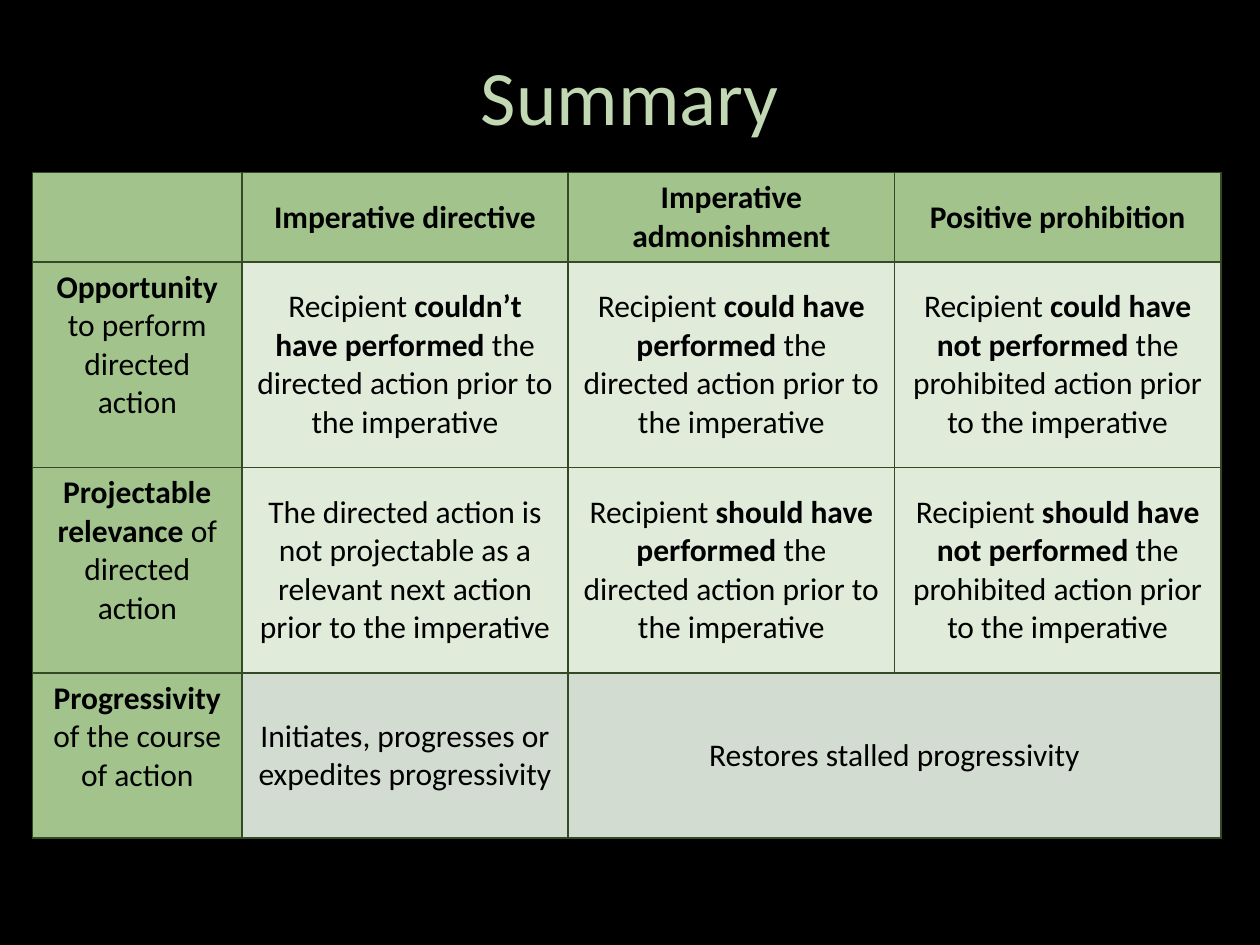
from lxml import etree
from pptx import Presentation
from pptx.dml.color import RGBColor
from pptx.enum.text import MSO_ANCHOR, PP_ALIGN
from pptx.oxml.ns import qn
from pptx.util import Inches, Pt

MIDDLE, TOP = MSO_ANCHOR.MIDDLE, MSO_ANCHOR.TOP
CENTER = PP_ALIGN.CENTER
FONT = "Calibri"
HEAD, BODY, LAST = "A2C48C", "E0EBD9", "D3DCD0"
EDGE = "344926"
WIDTHS = [1.66, 2.59, 2.59, 2.59]
HEIGHTS = [0.71, 1.63, 1.63, 1.31]
DIRECTED = " the directed action prior to the imperative"
BANNED = " the prohibited action prior to the imperative"

# Each cell lists plain and bold parts in turn, starting with plain.
ROWS = [
    [[], ["", "Imperative directive"], ["", "Imperative admonishment"],
     ["", "Positive prohibition"]],
    [["", "Opportunity", " to perform directed action"],
     ["Recipient ", "couldn’t have performed", DIRECTED],
     ["Recipient ", "could have performed", DIRECTED],
     ["Recipient ", "could have not performed", BANNED]],
    [["", "Projectable relevance", " of directed action"],
     ["The directed action is not projectable as a relevant next action "
      "prior to the imperative"],
     ["Recipient ", "should have performed", DIRECTED],
     ["Recipient ", "should have not performed", BANNED]],
    [["", "Progressivity", " of the course of action"],
     ["Initiates, progresses or expedites progressivity"],
     ["Restores stalled progressivity"], []],
]


def color(text):
    return RGBColor.from_string(text)


def style(para, size, tint):
    para.alignment = CENTER
    para.font.name = FONT
    para.font.size = Pt(size)
    para.font.color.rgb = color(tint)


def add_edges(cell):
    props = cell._tc.get_or_add_tcPr()
    for spot, side in enumerate(("lnL", "lnR", "lnT", "lnB")):
        line = etree.Element(qn(f"a:{side}"), w=str(Pt(1)))
        fill = etree.SubElement(line, qn("a:solidFill"))
        etree.SubElement(fill, qn("a:srgbClr"), val=EDGE)
        props.insert(spot, line)


def fill_cell(cell, parts, tint, anchor):
    cell.fill.solid()
    cell.fill.fore_color.rgb = color(tint)
    cell.vertical_anchor = anchor
    add_edges(cell)
    para = cell.text_frame.paragraphs[0]
    style(para, 18, "000000")
    for spot, text in enumerate(parts):
        if text:
            run = para.add_run()
            run.text = text
            run.font.bold = spot % 2 == 1


def add_title(slide, left, top, width, height):
    title = slide.shapes.title
    title.left, title.top = Inches(left), Inches(top)
    title.width, title.height = Inches(width), Inches(height)
    frame = title.text_frame
    frame.text = "Summary"
    frame.vertical_anchor = MIDDLE
    style(frame.paragraphs[0], 44, "C1D8B3")


def add_grid(slide, left, top, width, height):
    table = slide.shapes.add_table(
        len(ROWS), len(WIDTHS), Inches(left), Inches(top),
        Inches(width), Inches(height)).table
    for column, size in zip(table.columns, WIDTHS):
        column.width = Inches(size)
    for row, size in zip(table.rows, HEIGHTS):
        row.height = Inches(size)
    tints = [HEAD, BODY, BODY, LAST]
    for r, row in enumerate(ROWS):
        for c, parts in enumerate(row):
            tint = tints[r] if c else HEAD
            fill_cell(table.cell(r, c), parts, tint, MIDDLE if c else TOP)
    table.cell(3, 2).merge(table.cell(3, 3))


def main():
    deck = Presentation()
    deck.slide_width, deck.slide_height = Inches(10), Inches(7.5)
    slide = deck.slides.add_slide(deck.slide_layouts[5])
    slide.background.fill.solid()
    slide.background.fill.fore_color.rgb = color("000000")
    add_title(slide, 0.5, 0.3, 9, 0.91)
    add_grid(slide, 0.26, 1.37, sum(WIDTHS), sum(HEIGHTS))
    deck.save("out.pptx")


if __name__ == "__main__":
    main()
